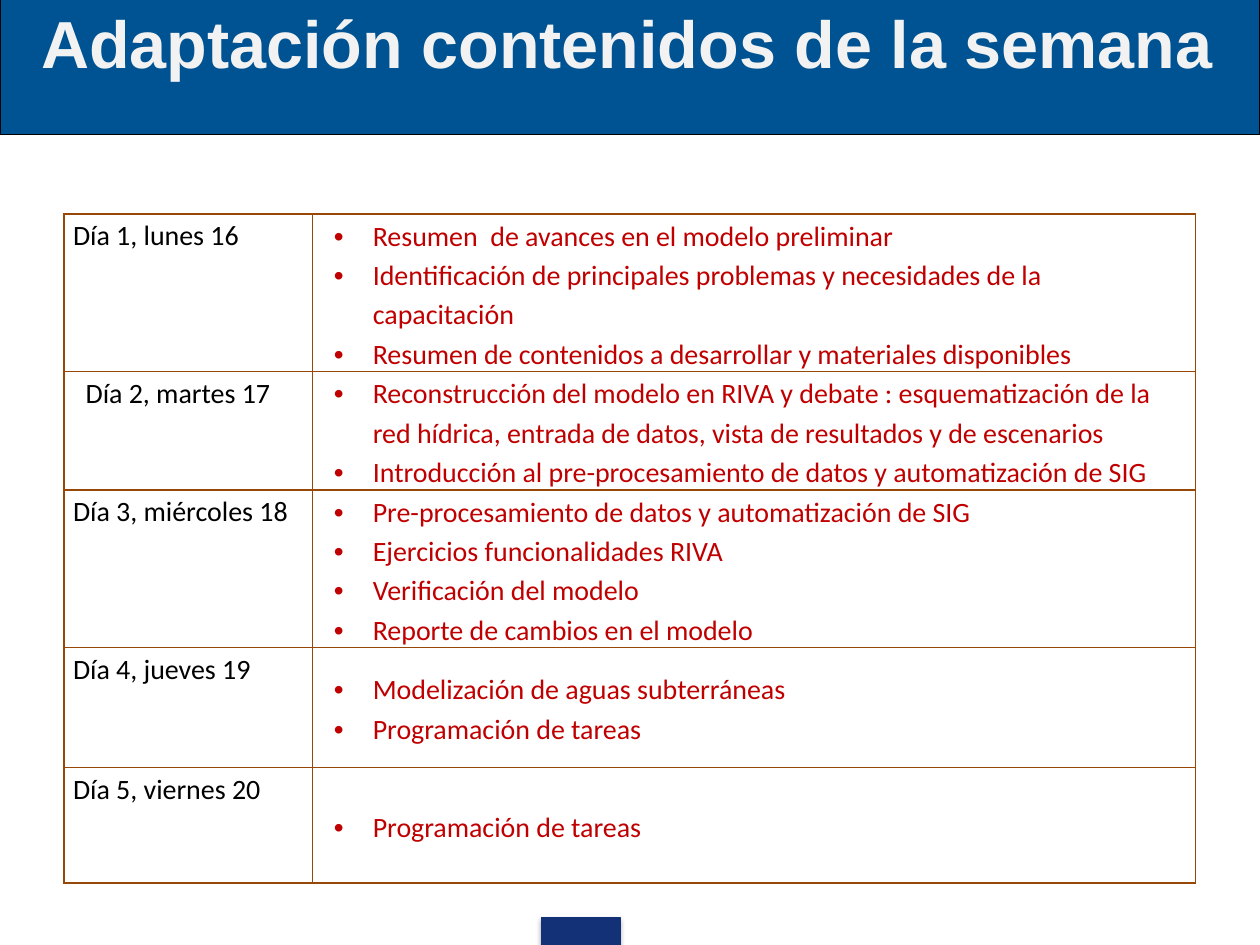
from lxml import etree
from pptx import Presentation
from pptx import util as u
from pptx.dml.color import RGBColor
from pptx.enum import shapes, text
from pptx.oxml.ns import qn

COLORS = {"banner": "005392", "outline": "000000", "title": "F2F2F2", "tab": "133176",
          "border": "984806", "day": "000000", "topic": "C00000"}
TITLE = "Adaptación contenidos de la semana"
DAYS = [
    ("Día 1, lunes 16", 1.25, 0, [
        "Resumen  de avances en el modelo preliminar",
        "Identificación de principales problemas y necesidades de la capacitación",
        "Resumen de contenidos a desarrollar y materiales disponibles"]),
    ("Día 2, martes 17", 0.94, 0.1, [
        "Reconstrucción del modelo en RIVA y debate : esquematización de la red hídrica, "
        "entrada de datos, vista de resultados y de escenarios",
        "Introducción al pre-procesamiento de datos y automatización de SIG"]),
    ("Día 3, miércoles 18", 1.25, 0, [
        "Pre-procesamiento de datos y automatización de SIG",
        "Ejercicios funcionalidades RIVA",
        "Verificación del modelo",
        "Reporte de cambios en el modelo"]),
    ("Día 4, jueves 19", 0.95, 0, [
        "Modelización de aguas subterráneas",
        "Programación de tareas"]),
    ("Día 5, viernes 20", 0.92, 0, ["Programación de tareas"]),
]
COLUMNS = (1.97, 7.01)


def rgb(name):
    return RGBColor.from_string(COLORS[name])


def child(parent, tag, **attrs):
    return etree.SubElement(parent, qn(tag), {k: str(v) for k, v in attrs.items()})


def add_bar(s, box, fill, line):
    sp = s.shapes.add_shape(shapes.MSO_SHAPE.RECTANGLE, *map(u.Inches, box))
    sp.shadow.inherit = False
    sp.fill.solid()
    sp.fill.fore_color.rgb = rgb(fill)
    sp.line.color.rgb = rgb(line)
    sp.line.width = u.Pt(0.75)
    return sp


def add_shadow(sp):
    effects = sp._element.spPr.find(qn("a:effectLst"))
    shadow = child(effects, "a:outerShdw", blurRad=u.Pt(3.1), dist=u.Pt(1.8),
                   dir=90 * 60000, rotWithShape=0)
    child(child(shadow, "a:srgbClr", val="000000"), "a:alpha", val=35000)


def style_font(p, name, size, color, bold=False):
    p.font.name, p.font.size, p.font.bold = name, u.Pt(size), bold
    p.font.color.rgb = rgb(color)


def fill_cell(cell, lines, color, left=0, hanging=0):
    cell.margin_left = cell.margin_right = u.Inches(0.07)
    cell.margin_top = cell.margin_bottom = 0
    tcPr = cell._tc.get_or_add_tcPr()
    for side in ("L", "R", "T", "B"):
        ln = child(tcPr, f"a:ln{side}", w=u.Pt(1))
        child(child(ln, "a:solidFill"), "a:srgbClr", val=COLORS["border"])
    cell.fill.background()
    tf = cell.text_frame
    for i, line in enumerate(lines):
        p = tf.paragraphs[0] if i == 0 else tf.add_paragraph()
        p.text = line
        p.line_spacing = 1.15
        pPr = p._p.get_or_add_pPr()
        pPr.set("marL", str(u.Inches(left)))
        pPr.set("indent", str(-u.Inches(hanging)))
        if hanging:
            child(pPr, "a:buFont", typeface="Arial")
            child(pPr, "a:buChar", char="•")
        style_font(p, "Calibri", 16, color)


def main():
    prs = Presentation()
    prs.slide_width, prs.slide_height = u.Inches(10), u.Inches(7.5)
    s = prs.slides.add_slide(prs.slide_layouts[6])

    add_shadow(add_bar(s, (4.3, 7.28, 0.62, 0.22), "tab", "tab"))
    add_bar(s, (0, -0.03, 10, 1.1), "banner", "outline")

    tf = s.shapes.add_textbox(*map(u.Inches, (-0.04, -0.03, 10.04, 1.25))).text_frame
    tf.word_wrap = True
    p = tf.paragraphs[0]
    p.text = TITLE
    p.alignment = text.PP_ALIGN.CENTER
    style_font(p, "Arial", 38, "title", bold=True)

    height = sum(day[1] for day in DAYS)
    table = s.shapes.add_table(len(DAYS), len(COLUMNS), *map(
        u.Inches, (0.51, 1.7, sum(COLUMNS), height))).table
    table.first_row = table.horz_banding = False
    for column, width in zip(table.columns, COLUMNS):
        column.width = u.Inches(width)
    for i, (day, row_height, indent, topics) in enumerate(DAYS):
        table.rows[i].height = u.Inches(row_height)
        fill_cell(table.cell(i, 0), [day], "day", left=indent)
        topic_cell = table.cell(i, 1)
        topic_cell.vertical_anchor = text.MSO_ANCHOR.MIDDLE
        fill_cell(topic_cell, topics, "topic", left=0.41, hanging=0.31)

    prs.save("out.pptx")


if __name__ == "__main__":
    main()
